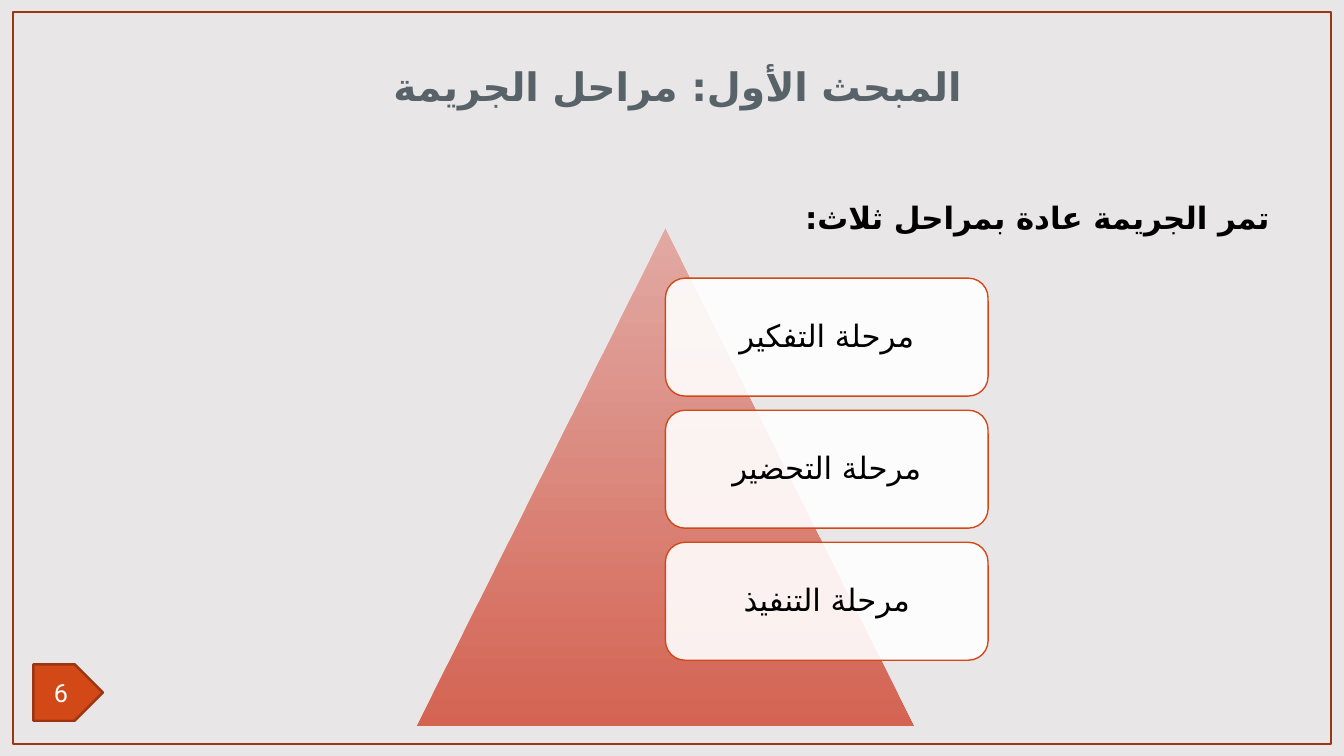
from dataclasses import dataclass
from lxml.etree import SubElement
from pptx import Presentation
from pptx.dml.color import RGBColor
from pptx.enum.lang import MSO_LANGUAGE_ID as Language
from pptx.enum.shapes import MSO_SHAPE as Preset
from pptx.enum.text import MSO_ANCHOR as Anchor, MSO_AUTO_SIZE as AutoSize, PP_ALIGN as Align
from pptx.oxml.ns import qn
from pptx.util import Inches, Pt

WIDTH, HEIGHT = Inches(13.33), Inches(7.5)
PAPER, RUST, ORANGE, SLATE = "E9E6E7", "9C3511", "D34817", "576368"
BLACK, WHITE = "000000", "FFFFFF"
ARABIC_FONT = "DejaVu Sans"
STAGES = ["مرحلة التفكير", "مرحلة التحضير", "مرحلة التنفيذ"]
STAGE_TOP, STAGE_PITCH = 36.8, 17.47


@dataclass
class Area:
    """A rectangle in percent of the slide's width and height."""
    left: float
    top: float
    width: float
    height: float

    def lengths(self) -> tuple[int, int, int, int]:
        """Return left, top, width and height as slide lengths."""
        return (int(WIDTH * self.left / 100), int(HEIGHT * self.top / 100),
                int(WIDTH * self.width / 100), int(HEIGHT * self.height / 100))


@dataclass
class Wording:
    """A single paragraph with its format."""
    text: str
    size: float
    font: str
    color: str
    bold: bool = False
    align: Align = Align.CENTER
    anchor: Anchor = Anchor.MIDDLE
    spacing: float = 1.0
    rtl: bool = True
    language: Language = Language.ARABIC


@dataclass
class Figure:
    """A preset shape with its colours."""
    preset: Preset
    area: Area
    fill: str | None = None
    line: str | None = None
    line_width: float = 1.75
    opacity: int = 100


def rgb(value: str) -> RGBColor:
    """Turn a hex string into a colour."""
    return RGBColor.from_string(value)


def set_all(target, values: dict) -> None:
    """Set each named attribute on the target."""
    for name, value in values.items():
        setattr(target, name, value)


def fade(color_element, percent: int) -> None:
    """Give a colour element an opacity."""
    SubElement(color_element, qn("a:alpha"), val=str(percent * 1000))


def write(box, wording: Wording) -> None:
    """Write one formatted paragraph into a shape."""
    frame = box.text_frame
    set_all(frame, {"word_wrap": True, "auto_size": AutoSize.NONE,
                    "vertical_anchor": wording.anchor})
    para = frame.paragraphs[0]
    set_all(para, {"alignment": wording.align, "line_spacing": wording.spacing,
                   "space_before": Pt(0)})
    para._p.get_or_add_pPr().set("rtl", str(int(wording.rtl)))
    span = para.add_run()
    span.text = wording.text
    set_all(span.font, {"size": Pt(wording.size), "name": wording.font, "bold": wording.bold,
                        "language_id": wording.language})
    span.font.color.rgb = rgb(wording.color)
    SubElement(span._r.get_or_add_rPr(), qn("a:cs"), typeface=ARABIC_FONT)


def draw(page, figure: Figure):
    """Draw a preset shape and return it."""
    shape = page.shapes.add_shape(figure.preset, *figure.area.lengths())
    shape.shadow.inherit = False
    if figure.fill:
        shape.fill.solid()
        shape.fill.fore_color.rgb = rgb(figure.fill)
        if figure.opacity < 100:
            fade(shape._element.spPr.find(f".//{qn('a:srgbClr')}"), figure.opacity)
    else:
        shape.fill.background()
    if figure.line:
        shape.line.color.rgb = rgb(figure.line)
        shape.line.width = Pt(figure.line_width)
    else:
        shape.line.fill.background()
    return shape


def draw_pyramid(page) -> None:
    """Draw the triangle that darkens towards its base."""
    pyramid = draw(page, Figure(Preset.ISOSCELES_TRIANGLE, Area(31.02, 30.22, 36.98, 65.7)))
    pyramid.fill.gradient()
    pyramid.fill.gradient_angle = 270
    for stop, position, color in zip(pyramid.fill.gradient_stops, (0, 1), ("E2A39C", "D56453")):
        set_all(stop, {"position": position})
        stop.color.rgb = rgb(color)
    fade(pyramid._element.spPr.find(f".//{qn('a:srgbClr')}"), 90)


def main() -> None:
    """Build the slide and save the deck."""
    deck = Presentation()
    set_all(deck, {"slide_width": WIDTH, "slide_height": HEIGHT})
    page = deck.slides.add_slide(deck.slide_layouts[5])
    page.background.fill.solid()
    page.background.fill.fore_color.rgb = rgb(PAPER)

    draw(page, Figure(Preset.RECTANGLE, Area(0.98, 1.6, 98.05, 96.85), line=RUST))
    badge = draw(page, Figure(Preset.PENTAGON, Area(2.48, 87.87, 5.18, 7.47), ORANGE, RUST))
    write(badge, Wording("6", 18, "Roboto", WHITE, rtl=False, language=Language.ENGLISH_US))

    title = page.shapes.title
    names = ("left", "top", "width", "height")
    set_all(title, dict(zip(names, Area(22.2, 4.13, 56.41, 13.73).lengths())))
    write(title, Wording("المبحث الأول: مراحل الجريمة", 28, "Calibri", SLATE, True, spacing=1.1))

    intro = page.shapes.add_textbox(*Area(5.03, 23.2, 90.17, 73.73).lengths())
    write(intro, Wording("تمر الجريمة عادة بمراحل ثلاث:", 22, "Arial", BLACK, True,
                         Align.RIGHT, Anchor.TOP, 1.5))

    draw_pyramid(page)
    for row, stage in enumerate(STAGES):
        area = Area(49.51, STAGE_TOP + row * STAGE_PITCH, 24.01, 15.6)
        card = draw(page, Figure(Preset.ROUNDED_RECTANGLE, area, WHITE, ORANGE, 1, 90))
        write(card, Wording(stage, 22, "Arial", BLACK, spacing=0.9, rtl=False))

    deck.save("out.pptx")


if __name__ == "__main__":
    main()
